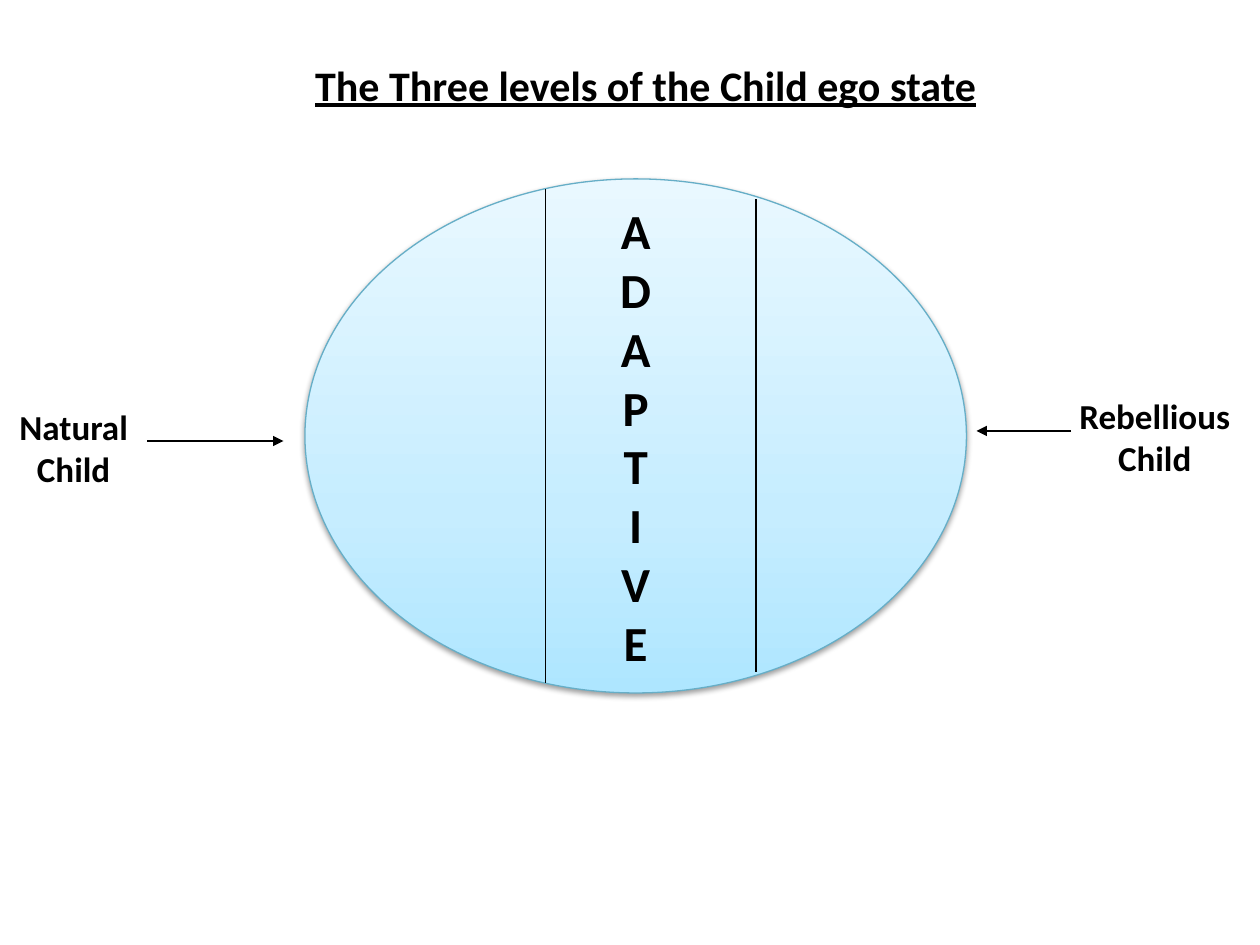
import pptx
import pptx.dml.color
import pptx.enum.shapes
import pptx.enum.text
import pptx.oxml
import pptx.oxml.ns
import pptx.util
from copy import deepcopy

Inches = pptx.util.Inches
Pt = pptx.util.Pt
RGB = pptx.dml.color.RGBColor.from_string
qn = pptx.oxml.ns.qn

# Content: boxes are left, top, width, height; lines are start, end
TITLE = ("The Three levels of the Child ego state", (0.75, 0.42, 8.75, 0.5))
CORE = ("ADAPTIVE", (2.42, 1.42, 5.25, 4.08))
LABELS = [
    ("Natural Child", (0, 3.17, 1.17, 0.77)),
    ("Rebellious Child", (8.33, 3.08, 1.67, 0.77)),
]
DIVIDERS = [((4.33, 1.5), (4.33, 5.42)), ((6, 1.58), (6, 5.33))]
ARROWS = [((1.17, 3.5), (2.25, 3.5)), ((8.5, 3.42), (7.75, 3.42))]

THEME = {
    "font": "Calibri",
    "ink": "000000",
    "outline": "66AEC7",
    "gradient": [(0, "AEE6FF"), (0.35, "C6EDFF"), (1, "E9F8FF")],
    "title": 24, "core": 28, "label": 20, "line": 0.75,
}
SHADOW = (
    '<a:outerShdw xmlns:a="http://schemas.openxmlformats.org/drawingml/2006/main"'
    f' blurRad="{Pt(3.1)}" dist="{Pt(1.6)}" dir="5400000" rotWithShape="0">'
    '<a:srgbClr val="000000"><a:alpha val="38000"/></a:srgbClr></a:outerShdw>'
)


def style(para, size, underline=None):
    para.alignment = pptx.enum.text.PP_ALIGN.CENTER
    para.space_before = Pt(0)
    font = para.font
    font.name, font.size, font.bold = THEME["font"], Pt(size), True
    font.underline = underline
    font.color.rgb = RGB(THEME["ink"])


def add_line(page, start, end, arrow=False):
    line = page.shapes.add_connector(
        pptx.enum.shapes.MSO_CONNECTOR.STRAIGHT,
        *(Inches(value) for value in start + end))
    line.line.color.rgb = RGB(THEME["ink"])
    line.line.width = Pt(THEME["line"])
    if arrow:
        head = pptx.oxml.ns.qn("a:tailEnd")
        line.line._get_or_add_ln().makeelement(head)
        line.line._get_or_add_ln().append(
            line.line._get_or_add_ln().makeelement(head, {"type": "triangle"}))
    properties = line._element.spPr
    properties.append(properties.makeelement(qn("a:effectLst")))


def fill_gradient(shape):
    shape.fill.gradient()
    shape.fill.gradient_angle = 90
    stop_list = shape._element.spPr.find(qn("a:gradFill")).find(qn("a:gsLst"))
    stop_list.append(deepcopy(stop_list[-1]))
    for stop, (position, color) in zip(shape.fill.gradient_stops, THEME["gradient"]):
        stop.position = position
        stop.color.rgb = RGB(color)


deck = pptx.Presentation()
deck.slide_width, deck.slide_height = Inches(10), Inches(7.5)
page = deck.slides.add_slide(deck.slide_layouts[5])

# Title
text, place = TITLE
title = page.shapes.title
title.left, title.top, title.width, title.height = map(Inches, place)
title.text_frame.text = text
style(title.text_frame.paragraphs[0], THEME["title"], underline=True)

# Ellipse with one letter per line
word, place = CORE
ellipse = page.shapes.add_shape(
    pptx.enum.shapes.MSO_SHAPE.OVAL, *map(Inches, place))
fill_gradient(ellipse)
ellipse.line.color.rgb = RGB(THEME["outline"])
ellipse.line.width = Pt(THEME["line"])
ellipse.shadow.inherit = False
ellipse._element.spPr.find(qn("a:effectLst")).append(pptx.oxml.parse_xml(SHADOW))
frame = ellipse.text_frame
frame.word_wrap = False
frame.vertical_anchor = pptx.enum.text.MSO_ANCHOR.MIDDLE
frame.text = "\n".join(word)
for para in frame.paragraphs:
    style(para, THEME["core"])

# Dividers and arrows
for start, end in DIVIDERS:
    add_line(page, start, end)
for start, end in ARROWS:
    add_line(page, start, end, arrow=True)

# Side labels
for text, place in LABELS:
    box = page.shapes.add_textbox(*map(Inches, place))
    box.text_frame.word_wrap = True
    box.text_frame.text = text
    style(box.text_frame.paragraphs[0], THEME["label"])

deck.save("out.pptx")
